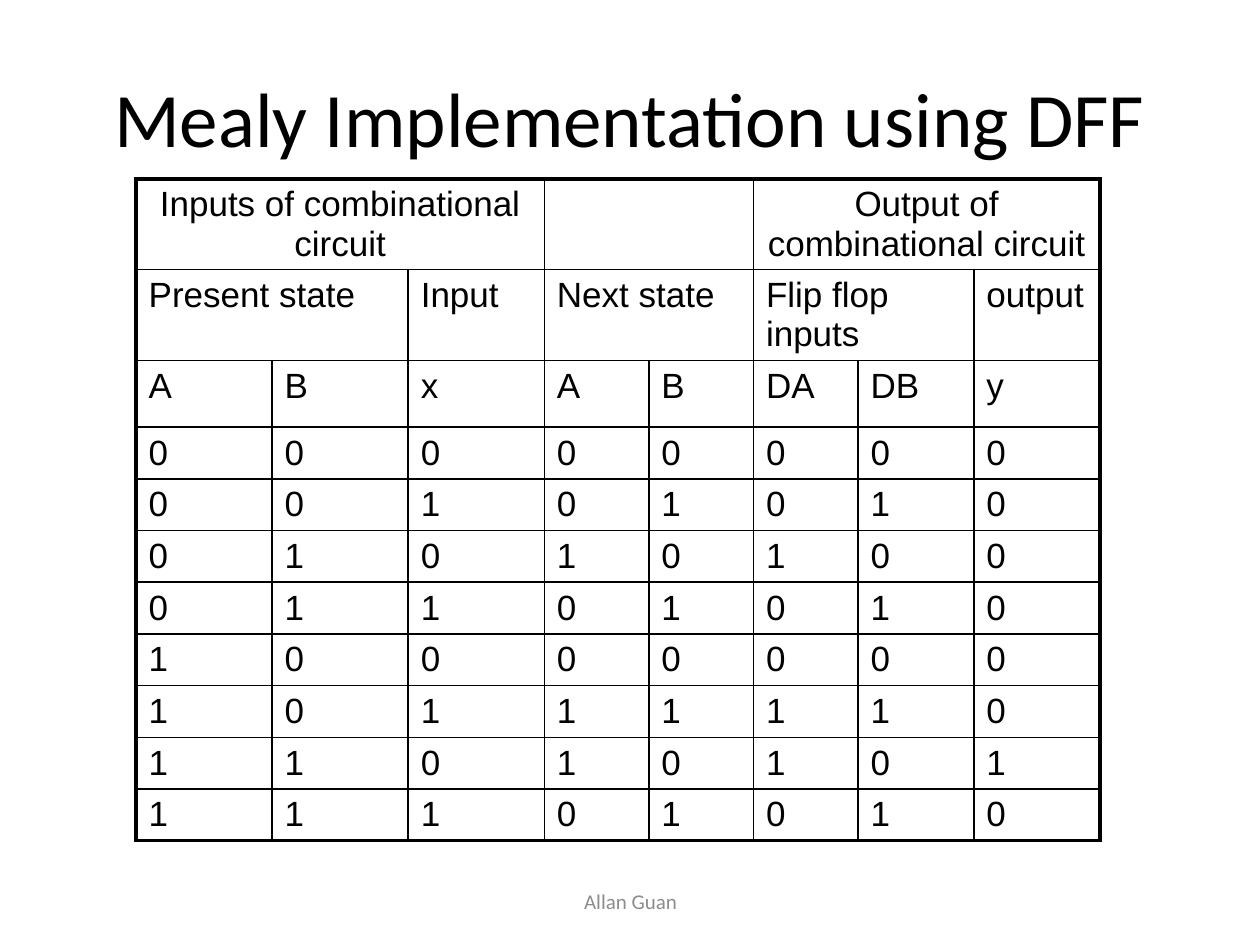
from lxml import etree
from pptx import Presentation
from pptx.dml.color import RGBColor
from pptx.enum.text import MSO_ANCHOR, PP_ALIGN
from pptx.oxml.ns import qn
from pptx.util import Inches, Pt

CENTER, LEFT = PP_ALIGN.CENTER, PP_ALIGN.LEFT
MIDDLE, TOP = MSO_ANCHOR.MIDDLE, MSO_ANCHOR.TOP

COLORS = {"ink": "000000", "footer": "8C8C8C"}
TITLE = "Mealy Implementation using DFF"
FOOTER = "Allan Guan"

# Header rows: (text, number of columns)
HEADERS = [
    [("Inputs of combinational circuit", 3), ("", 2),
     ("Output of combinational circuit", 3)],
    [("Present state", 2), ("Input", 1), ("Next state", 2),
     ("Flip flop inputs", 2), ("output", 1)],
    [(name, 1) for name in ("A", "B", "x", "A", "B", "DA", "DB", "y")],
]
# Each row: present A B, input x, next A B, flip-flop DA DB, output y
STATES = ["00000000", "00101010", "01010100", "01101010",
          "10000000", "10111110", "11010101", "11101010"]
ROWS = HEADERS + [[(bit, 1) for bit in state] for state in STATES]

COLUMN_WIDTHS = [1.08, 1.08, 1.08, 0.83, 0.83, 0.83, 0.92, 1]
ROW_HEIGHTS = [0.72, 0.72, 0.53] + [0.41] * len(STATES)
THIN, THICK = 1, 2.25


def write(frame, text, font_name, size, color, alignment):
    frame.text = text
    paragraph = frame.paragraphs[0]
    paragraph.alignment = alignment
    font = paragraph.font if not text else paragraph.runs[0].font
    for name, value in {"name": font_name, "size": Pt(size)}.items():
        setattr(font, name, value)
    font.color.rgb = RGBColor.from_string(COLORS[color])


def set_borders(cell, widths):
    """Draw the cell's edges; widths maps L, R, T, B to points."""
    properties = cell._tc.get_or_add_tcPr()
    for position, (side, width) in enumerate(widths.items()):
        line = etree.Element(qn(f"a:ln{side}"), w=str(Pt(width)))
        fill = etree.SubElement(line, qn("a:solidFill"))
        etree.SubElement(fill, qn("a:srgbClr"), val=COLORS["ink"])
        properties.insert(position, line)


def add_state_table(slide):
    last_row, last_column = len(ROWS) - 1, len(COLUMN_WIDTHS) - 1
    table = slide.shapes.add_table(
        len(ROWS), len(COLUMN_WIDTHS), Inches(1.08), Inches(1.42),
        Inches(sum(COLUMN_WIDTHS)), Inches(sum(ROW_HEIGHTS))).table
    table.first_row = table.horz_banding = False
    for column, width in zip(table.columns, COLUMN_WIDTHS):
        column.width = Inches(width)
    for row, height in zip(table.rows, ROW_HEIGHTS):
        row.height = Inches(height)

    for row_index, row in enumerate(ROWS):
        start = 0
        for text, span in row:
            end = start + span - 1
            cell = table.cell(row_index, start)
            if span > 1:
                cell.merge(table.cell(row_index, end))
            write(cell.text_frame, text, "Arial", 20, "ink",
                  LEFT if row_index else CENTER)
            cell.vertical_anchor = TOP if row_index else MIDDLE
            for column_index in range(start, end + 1):
                part = table.cell(row_index, column_index)
                part.fill.background()
                set_borders(part, {
                    "L": THIN if start else THICK,
                    "R": THICK if end == last_column else THIN,
                    "T": THIN if row_index else THICK,
                    "B": THICK if row_index == last_row else THIN,
                })
            start = end + 1


def main():
    presentation = Presentation()
    presentation.slide_width, presentation.slide_height = Inches(10), Inches(7.5)
    slide = presentation.slides.add_slide(presentation.slide_layouts[5])

    title = slide.shapes.title
    title.left, title.top = Inches(0.5), Inches(0.3)
    title.width, title.height = Inches(9), Inches(1.25)
    write(title.text_frame, TITLE, "Calibri", 44, "ink", CENTER)
    title.text_frame.vertical_anchor = MIDDLE

    add_state_table(slide)

    footer = slide.shapes.add_textbox(
        Inches(3.42), Inches(6.95), Inches(3.17), Inches(0.4))
    footer.text_frame.word_wrap = True
    footer.text_frame.vertical_anchor = MIDDLE
    write(footer.text_frame, FOOTER, "Calibri", 12, "footer", CENTER)

    presentation.save("out.pptx")


if __name__ == "__main__":
    main()
